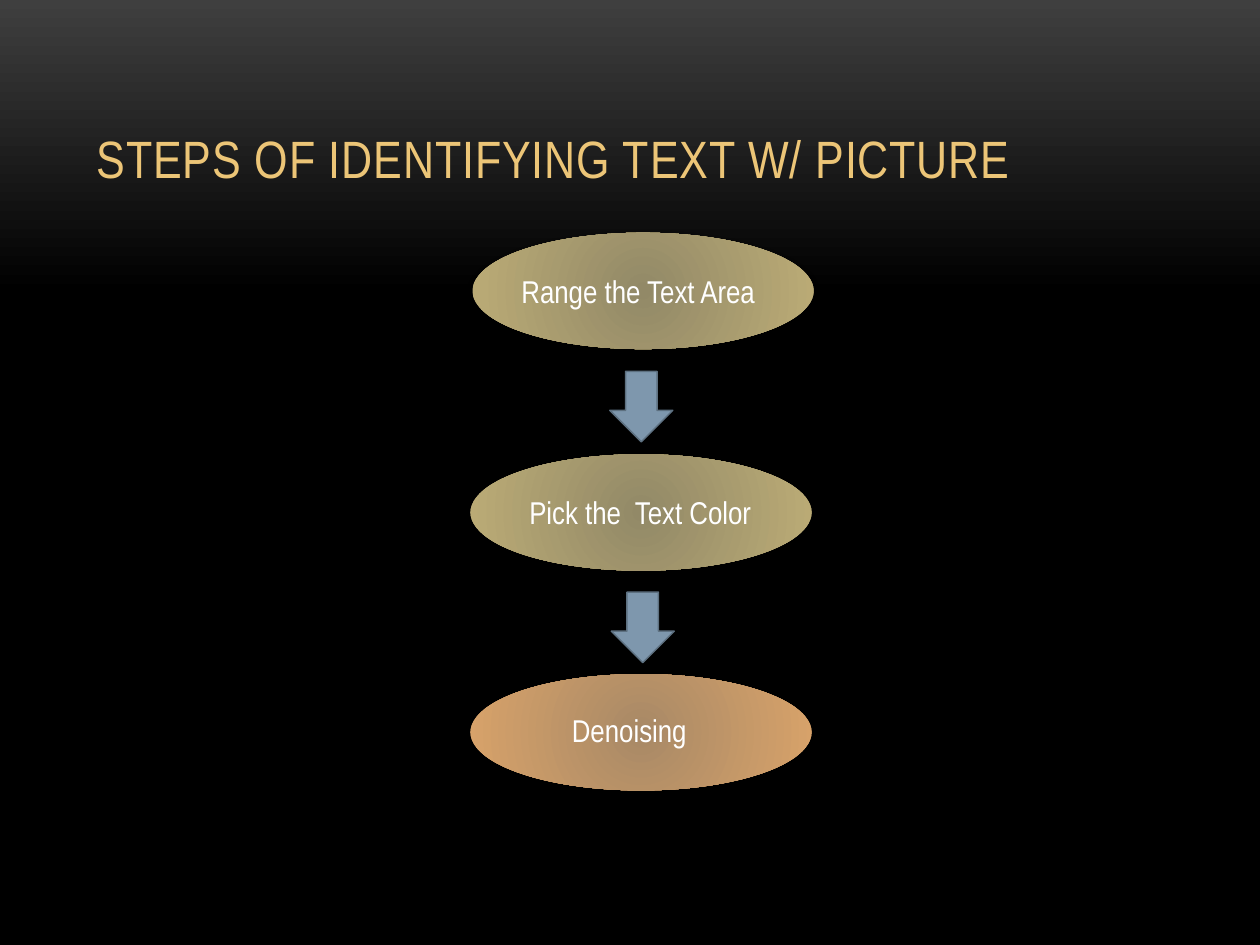
"""Build a slide showing three steps of text identification as a vertical flow."""
from lxml import etree
from pptx import Presentation
from pptx.dml.color import RGBColor
from pptx.enum.shapes import MSO_SHAPE
from pptx.enum.text import MSO_ANCHOR, MSO_AUTO_SIZE, PP_ALIGN
from pptx.oxml import parse_xml
from pptx.oxml.ns import nsdecls, qn
from pptx.util import Pt

OVAL, DOWN_ARROW = MSO_SHAPE.OVAL, MSO_SHAPE.DOWN_ARROW
BOTTOM, TOP = MSO_ANCHOR.BOTTOM, MSO_ANCHOR.TOP
LEFT = PP_ALIGN.LEFT
NO_FIT, GROW = MSO_AUTO_SIZE.NONE, MSO_AUTO_SIZE.SHAPE_TO_FIT_TEXT

THEME = {
    "font": "Arial Narrow",
    "title_size": 30,
    "label_size": 18,
    "title": "ECC577",
    "label": "FFFFFF",
    "background": ("3F3F3F", "000000"),
    "olive": ("928967", "BCAC76"),
    "orange": ("A88966", "D9A36A"),
    "arrow": "7E97AD",
    "arrow_line": "5D7080",
}

TITLE = "STEPS OF IDENTIFYING TEXT W/ PICTURE"
TITLE_FRAME = (48, 21.6, 624, 90)
OVAL_SIZE = (195, 66.5)
ARROW_SIZE = (36, 40.3)
STEPS = [
    {"text": "Range the Text Area", "colors": "olive", "oval": (270, 133), "label": (290.9, 152, 180, 29)},
    {"text": "Pick the  Text Color", "colors": "olive", "oval": (268.8, 259.6), "label": (295.4, 278.2, 180, 29)},
    {"text": "Denoising", "colors": "orange", "oval": (268.8, 385.2), "label": (319.7, 402.7, 96, 30)},
]
ARROWS = [(348.5, 212.2), (349.3, 338.4)]


def points(*lengths):
    return [Pt(length) for length in lengths]


def color(name):
    return RGBColor.from_string(name)


def fill_gradient(fill, colors, positions=(0, 1)):
    fill.gradient()
    for stop, name, position in zip(fill.gradient_stops, colors, positions):
        stop.color.rgb = color(name)
        stop.position = position


def write_text(shape, text, size, ink, anchor, fit):
    frame = shape.text_frame
    frame.word_wrap = True
    frame.auto_size = fit
    frame.vertical_anchor = anchor
    para = frame.paragraphs[0]
    para.alignment = LEFT
    span = para.add_run()
    span.text = text
    span.font.name = THEME["font"]
    span.font.size = Pt(size)
    span.font.color.rgb = color(ink)
    return span


def add_title(page):
    title = page.shapes.title
    title.left, title.top, title.width, title.height = points(*TITLE_FRAME)
    span = write_text(title, TITLE, THEME["title_size"], THEME["title"], BOTTOM, NO_FIT)
    span.font._element.set("spc", "50")


def add_oval(page, step):
    oval = page.shapes.add_shape(OVAL, *points(*step["oval"], *OVAL_SIZE))
    fill_gradient(oval.fill, THEME[step["colors"]])
    oval.line.fill.background()
    oval.shadow.inherit = False
    properties = oval._element.spPr
    gradient = properties.find(qn("a:gradFill"))
    gradient.remove(gradient.find(qn("a:lin")))
    gradient.append(parse_xml(
        f'<a:path {nsdecls("a")} path="circle">'
        '<a:fillToRect l="100000" t="100000" r="100000" b="100000"/></a:path>'))
    shadow = etree.SubElement(
        properties.find(qn("a:effectLst")), qn("a:outerShdw"),
        blurRad=str(Pt(4)), dist=str(Pt(2)), dir="5400000", rotWithShape="0")
    shade = etree.SubElement(shadow, qn("a:srgbClr"), val="000000")
    etree.SubElement(shade, qn("a:alpha"), val="40000")


def add_label(page, step):
    box = page.shapes.add_textbox(*points(*step["label"]))
    write_text(box, step["text"], THEME["label_size"], THEME["label"], TOP, GROW)


def add_arrow(page, corner):
    arrow = page.shapes.add_shape(DOWN_ARROW, *points(*corner, *ARROW_SIZE))
    arrow.shadow.inherit = False
    arrow.fill.solid()
    arrow.fill.fore_color.rgb = color(THEME["arrow"])
    arrow.line.color.rgb = color(THEME["arrow_line"])
    arrow.line.width = Pt(0.85)


def main():
    deck = Presentation()
    deck.slide_width, deck.slide_height = points(720, 540)
    page = deck.slides.add_slide(deck.slide_layouts[5])
    backdrop = page.background.fill
    fill_gradient(backdrop, THEME["background"], (0, 0.31))
    backdrop.gradient_angle = 270
    add_title(page)
    for step in STEPS:
        add_oval(page, step)
        add_label(page, step)
    for corner in ARROWS:
        add_arrow(page, corner)
    deck.save("out.pptx")


if __name__ == "__main__":
    main()
